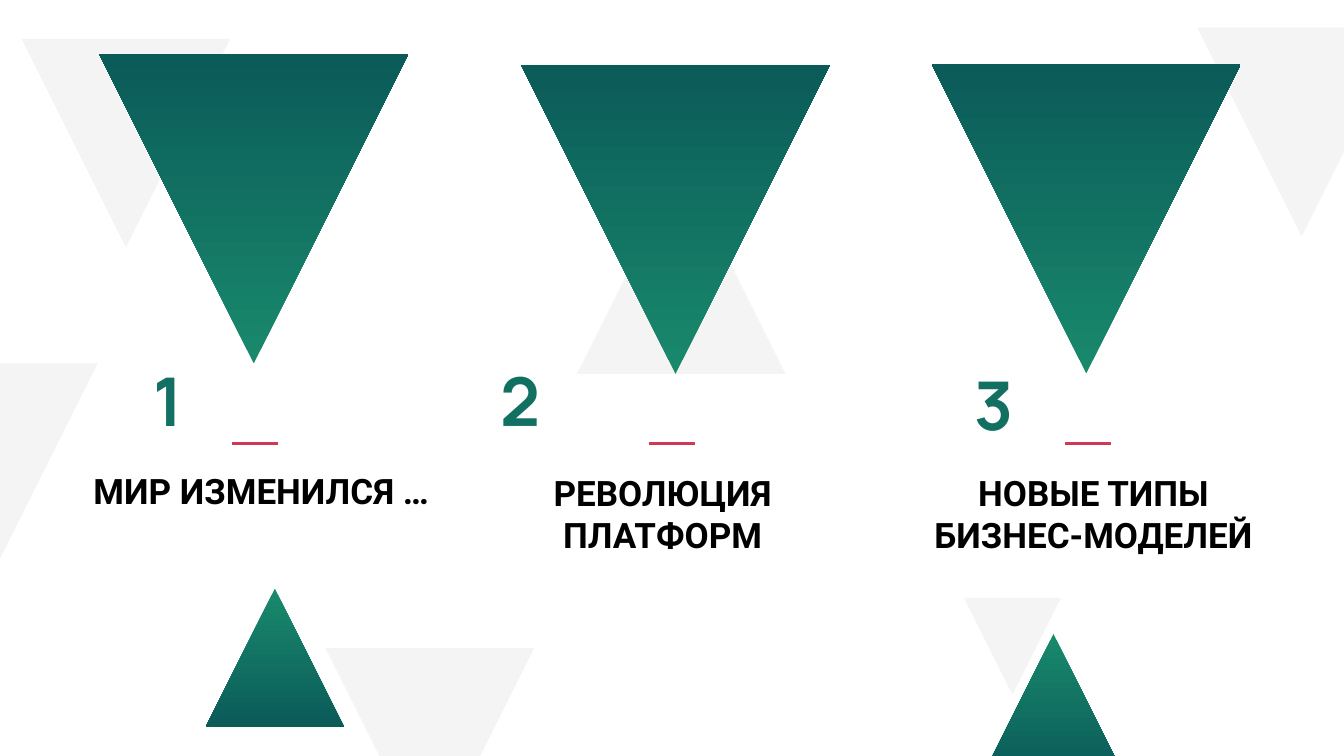
from lxml.etree import SubElement
from pptx import Presentation
from pptx.dml.color import RGBColor
from pptx.enum.shapes import MSO_CONNECTOR, MSO_SHAPE
from pptx.enum.text import MSO_ANCHOR, MSO_AUTO_SIZE, PP_ALIGN
from pptx.oxml.ns import qn
from pptx.util import Inches, Pt

PALE = RGBColor(0xF4, 0xF4, 0xF4)
GREEN = RGBColor(0x19, 0x89, 0x6C)
TEAL = RGBColor(0x0B, 0x5B, 0x59)
NUMBER = RGBColor(0x12, 0x70, 0x62)
CRIMSON = RGBColor(0xD0, 0x39, 0x52)
BLACK = RGBColor(0x00, 0x00, 0x00)
WHITE = RGBColor(0xFF, 0xFF, 0xFF)

SMALL, MEDIUM, LARGE, HUGE = 7.2, 10.31, 15.52, 22.98


class Canvas:
    """Places elements by percentages of the slide's width and height."""

    caption_font, number_font = "Roboto", "Manrope"

    def __init__(self, presentation):
        self.width = presentation.slide_width
        self.height = presentation.slide_height
        self.slide = presentation.slides.add_slide(presentation.slide_layouts[6])
        self.slide.background.fill.solid()
        self.slide.background.fill.fore_color.rgb = WHITE

    def across(self, share):
        return round(self.width * share / 100)

    def down(self, share):
        return round(self.height * share / 100)

    def triangle(self, left, top, side, pointing_down=True, gradient=False):
        length = self.across(side)
        shape = self.slide.shapes.add_shape(
            MSO_SHAPE.ISOSCELES_TRIANGLE,
            self.across(left), self.down(top), length, length)
        shape.shadow.inherit = False
        shape.line.fill.background()
        shape.rotation = 180 if pointing_down else 0
        if gradient:
            shape.fill.gradient()
            shape.fill.gradient_angle = 270
            for stop, color in zip(shape.fill.gradient_stops, (GREEN, TEAL)):
                stop.color.rgb = color
        else:
            shape.fill.solid()
            shape.fill.fore_color.rgb = PALE

    def text(self, words, left, top, width, height, font_name, size, color):
        shape = self.slide.shapes.add_textbox(
            self.across(left), self.down(top), self.across(width), self.down(height))
        frame = shape.text_frame
        frame.word_wrap = True
        frame.auto_size = MSO_AUTO_SIZE.SHAPE_TO_FIT_TEXT
        paragraph = frame.paragraphs[0]
        paragraph.text = words
        paragraph.alignment = PP_ALIGN.CENTER
        font = paragraph.font
        font.name, font.size, font.bold = font_name, Pt(size), True
        font.color.rgb = color
        return frame

    def caption(self, words, left, top, width, height):
        frame = self.text(words, left, top, width, height, self.caption_font, 50, BLACK)
        frame.vertical_anchor = MSO_ANCHOR.MIDDLE
        frame.margin_left = frame.margin_right = Inches(0.06)
        frame.margin_top = frame.margin_bottom = Inches(0.06)

    def number(self, digit, left, top):
        frame = self.text(digit, left, top, 7.61, 11.47, self.number_font, 96, NUMBER)
        properties = frame.paragraphs[0]._p.get_or_add_pPr().get_or_add_defRPr()
        outline = SubElement(properties, qn("a:ln"), w=str(Pt(1.06)))
        fill = SubElement(outline, qn("a:solidFill"))
        SubElement(fill, qn("a:srgbClr"), val=str(WHITE))
        properties.insert(0, outline)

    def dash(self, left, top, width):
        line = self.slide.shapes.add_connector(
            MSO_CONNECTOR.STRAIGHT, self.across(left), self.down(top),
            self.across(left + width), self.down(top))
        line.line.color.rgb = CRIMSON
        line.line.width = Pt(5)
        SubElement(line._element.spPr, qn("a:effectLst"))


def main():
    presentation = Presentation()
    presentation.slide_width, presentation.slide_height = Inches(26.67), Inches(15)
    canvas = Canvas(presentation)

    canvas.triangle(42.93, 21.87, LARGE, pointing_down=False)
    for left, top in ((89.09, 3.67), (24.22, 85.73), (-8.25, 48.07)):
        canvas.triangle(left, top, LARGE)
    canvas.triangle(73.23, 83.87, MEDIUM, pointing_down=False, gradient=True)
    canvas.triangle(71.73, 79.07, SMALL)
    canvas.triangle(69.33, 8.53, HUGE, gradient=True)

    captions = (
        ("МИР ИЗМЕНИЛСЯ …", 4.39, 61.8, 30.11, 6.27),
        ("РЕВОЛЮЦИЯ ПЛАТФОРМ", 35.88, 61.87, 26.85, 12),
        ("НОВЫЕ ТИПЫ БИЗНЕС-МОДЕЛЕЙ", 67.94, 61.87, 26.85, 12),
    )
    for column, caption in enumerate(captions):
        canvas.caption(*caption)
        canvas.dash(17.29 + 30.99 * column, 58.67, 3.41)

    canvas.triangle(15.3, 77.87, MEDIUM, pointing_down=False, gradient=True)
    for digit, left, top in (("1", 8.7, 47.2), ("2", 34.95, 47.2), ("3", 70.12, 47.67)):
        canvas.number(digit, left, top)

    canvas.triangle(1.61, 5.13, LARGE)
    canvas.triangle(38.77, 8.6, HUGE, gradient=True)
    canvas.triangle(7.39, 7.2, HUGE, gradient=True)

    presentation.save("out.pptx")


if __name__ == "__main__":
    main()
